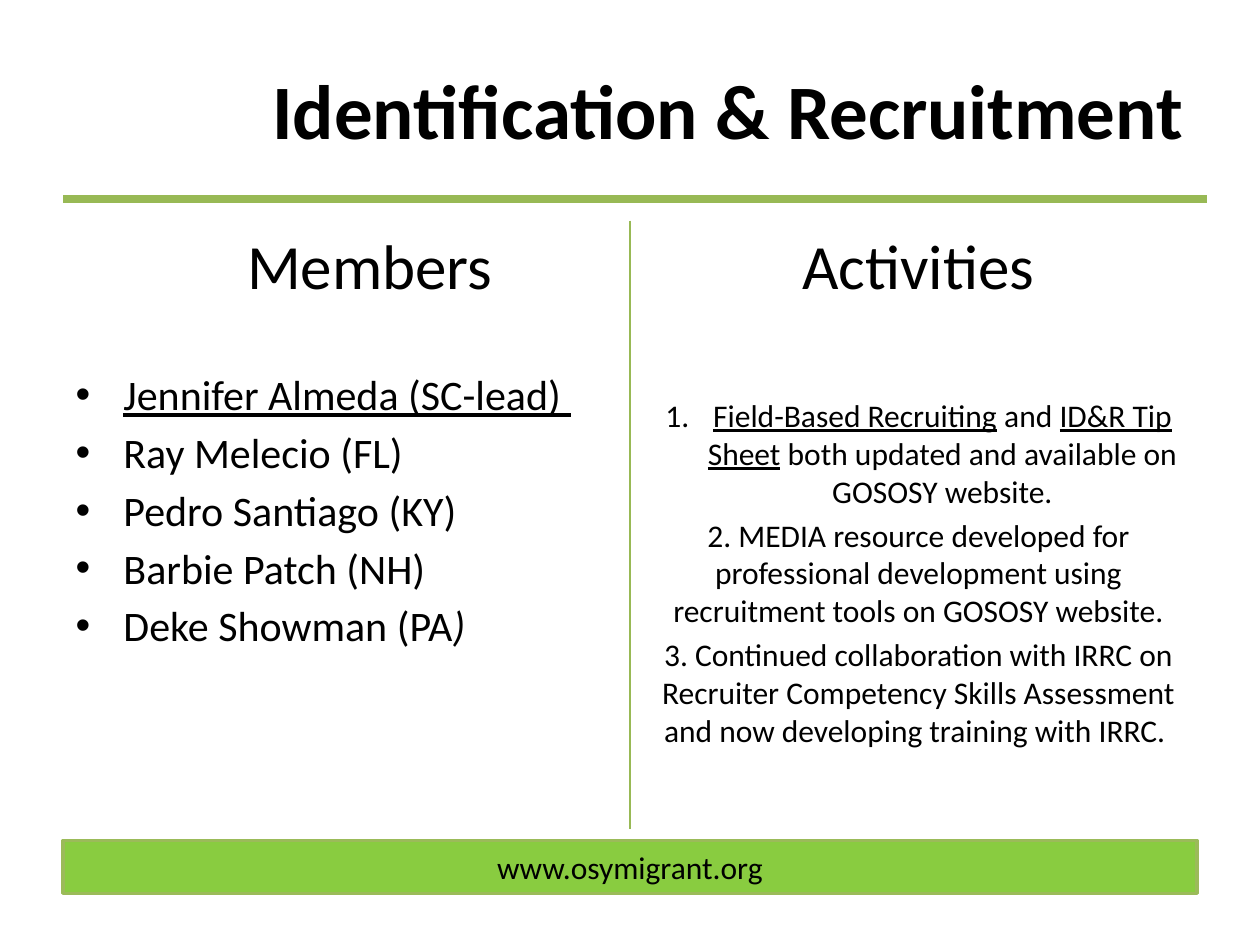
from dataclasses import dataclass

from lxml import etree
from pptx import Presentation
from pptx.dml.color import RGBColor
from pptx.enum.shapes import MSO_CONNECTOR, MSO_SHAPE
from pptx.enum.text import MSO_ANCHOR, MSO_AUTO_SIZE, PP_ALIGN
from pptx.oxml.ns import qn
from pptx.util import Inches, Pt

LEFT, MID, RIGHT = PP_ALIGN.LEFT, PP_ALIGN.CENTER, PP_ALIGN.RIGHT
MIDDLE, TOP = MSO_ANCHOR.MIDDLE, MSO_ANCHOR.TOP
NO_FIT = MSO_AUTO_SIZE.NONE
STRAIGHT, RECT = MSO_CONNECTOR.STRAIGHT, MSO_SHAPE.RECTANGLE
FONT = "Calibri"
COLORS = {"text": "000000", "rule": "98B955", "bar": "89CC40", "edge": "9BBB59"}
DOT = ("a:buChar", {"char": "•"})
NUMBER = ("a:buAutoNum", {"type": "arabicPeriod"})
PLAIN = ("a:buNone", {})


@dataclass
class Run:
    text: str
    line: bool = False
    slant: bool = False


@dataclass
class Rule:
    start: tuple[float, float]
    end: tuple[float, float]
    width: float


def color(name: str) -> RGBColor:
    return RGBColor.from_string(COLORS[name])


def write(frame, runs: list[Run], *, size: float, align=MID, bold: bool = False,
          before: float = 0, mark=PLAIN, left: float = 0, hang: float = 0) -> None:
    """Fill the frame's empty first paragraph, or add one after the last."""
    first = frame.paragraphs[0]
    para = frame.add_paragraph() if first.runs else first
    para.alignment = align
    para.space_before = Pt(before)
    props = para._p.get_or_add_pPr()
    props.set("marL", str(Inches(left)))
    props.set("indent", str(Inches(-hang)))
    tag, attrs = mark
    etree.SubElement(props, qn(tag), attrs)
    for part in runs:
        run = para.add_run()
        run.text = part.text
        font = run.font
        font.name, font.size, font.bold = FONT, Pt(size), bold
        font.underline, font.italic = part.line, part.slant
        font.color.rgb = color("text")


def place(shape, left: float, top: float, width: float, height: float, anchor=TOP):
    shape.left, shape.top = Inches(left), Inches(top)
    shape.width, shape.height = Inches(width), Inches(height)
    frame = shape.text_frame
    frame.word_wrap = True
    frame.auto_size = NO_FIT
    frame.vertical_anchor = anchor
    return frame


def draw(slide, rule: Rule) -> None:
    ends = [Inches(v) for v in rule.start + rule.end]
    line = slide.shapes.add_connector(STRAIGHT, *ends)
    line.line.color.rgb = color("rule")
    line.line.width = Pt(rule.width)
    etree.SubElement(line._element.spPr, qn("a:effectLst"))


MEMBERS = [
    [Run("Jennifer Almeda (SC-lead) ", line=True)],
    [Run("Ray Melecio (FL)")],
    [Run("Pedro Santiago (KY)")],
    [Run("Barbie Patch (NH)")],
    [Run("Deke Showman (PA"), Run(")", slant=True)],
]
TASKS = [
    [Run("Field-Based Recruiting", line=True), Run(" and "),
     Run("ID&R Tip Sheet", line=True),
     Run(" both updated and available on GOSOSY website.")],
    [Run("2. MEDIA resource developed for professional development using "
         "recruitment tools on GOSOSY website.")],
    [Run("3. Continued collaboration with IRRC on Recruiter Competency Skills "
         "Assessment and now developing training with IRRC. ")],
]
RULES = [Rule((0.5, 1.58), (9.58, 1.58), 4.5), Rule((5, 1.75), (5, 6.58), 1.5)]


def main() -> None:
    deck = Presentation()
    deck.slide_width, deck.slide_height = Inches(10), Inches(7.5)
    slide = deck.slides.add_slide(deck.slide_layouts[3])
    title, names, work = slide.placeholders

    # Title
    frame = place(title, 0.5, 0.3, 9, 1.12, MIDDLE)
    write(frame, [Run("Identification & Recruitment")], size=44, align=RIGHT, bold=True)

    # Members column
    frame = place(names, 0.5, 1.75, 4.42, 4.83)
    write(frame, [Run("Members")], size=36, left=0.45)
    for i, runs in enumerate(MEMBERS):
        write(frame, runs, size=24, align=LEFT, mark=DOT, left=0.38, hang=0.38,
              before=4.2 if i else 38)

    # Activities column
    frame = place(work, 5.08, 1.75, 4.42, 4.83)
    write(frame, [Run("Activities")], size=36)
    for i, runs in enumerate(TASKS):
        style = {"before": 3.5} if i else {
            "before": 53.5, "mark": NUMBER, "left": 0.38, "hang": 0.38}
        write(frame, runs, size=18, **style)

    # Rules
    for rule in RULES:
        draw(slide, rule)

    # Footer bar
    box = [Inches(v) for v in (0.5, 6.67, 9, 0.42)]
    bar = slide.shapes.add_shape(RECT, *box)
    bar.shadow.inherit = False
    bar.fill.solid()
    bar.fill.fore_color.rgb = color("bar")
    bar.line.color.rgb = color("edge")
    bar.line.width = Pt(2)
    bar.text_frame.vertical_anchor = MIDDLE
    write(bar.text_frame, [Run("www.osymigrant.org")], size=18)

    deck.save("out.pptx")


if __name__ == "__main__":
    main()
